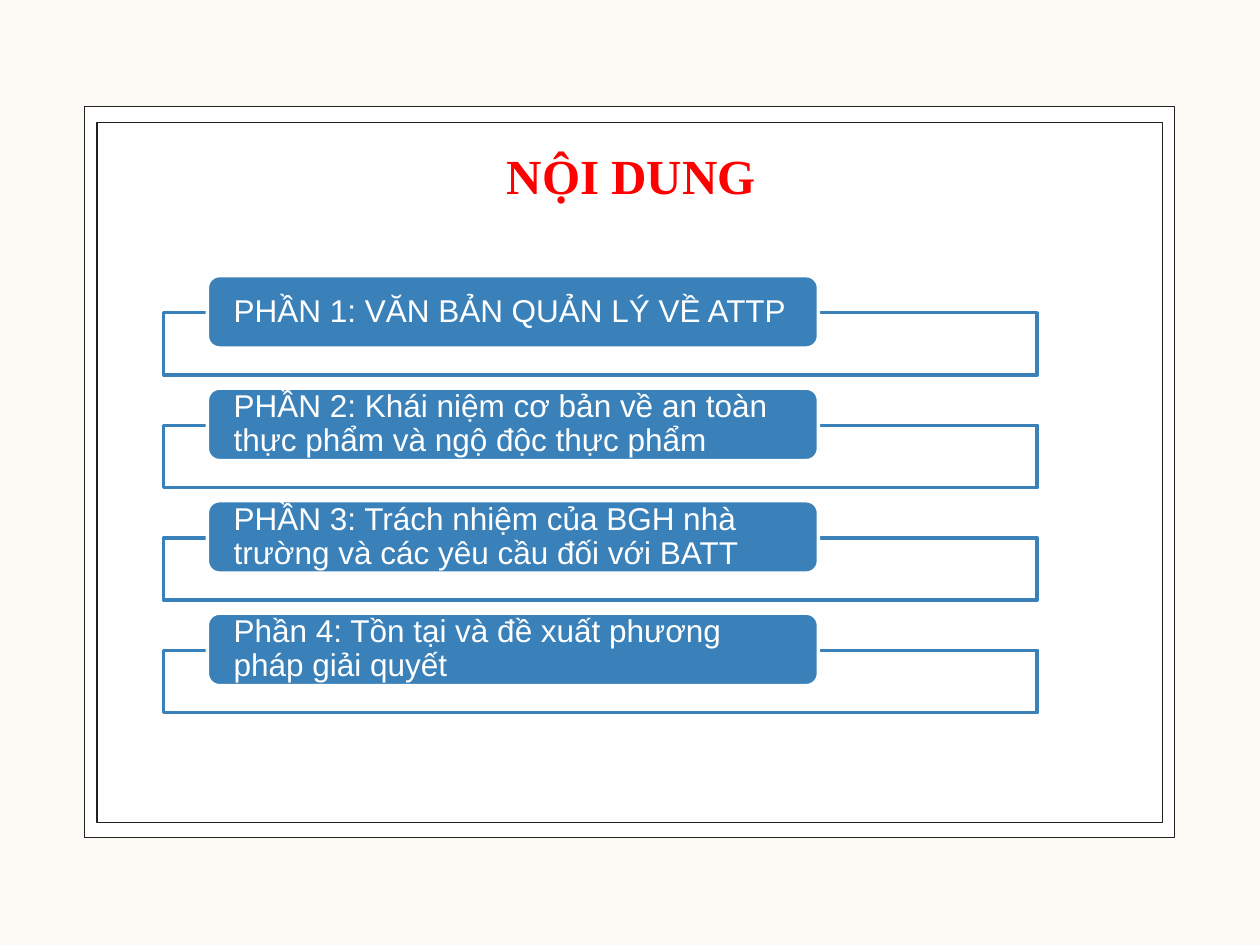
from lxml import etree
from pptx import Presentation
from pptx.dml.color import RGBColor
from pptx.enum.shapes import MSO_SHAPE
from pptx.enum.text import MSO_ANCHOR, MSO_AUTO_SIZE, PP_ALIGN
from pptx.oxml.ns import qn
from pptx.util import Pt

RECT, ROUND = MSO_SHAPE.RECTANGLE, MSO_SHAPE.ROUNDED_RECTANGLE
MIDDLE, BOTTOM = MSO_ANCHOR.MIDDLE, MSO_ANCHOR.BOTTOM
LEFT, CENTER = PP_ALIGN.LEFT, PP_ALIGN.CENTER
NO_FIT = MSO_AUTO_SIZE.NONE

# Content
TITLE = "NỘI DUNG"
PARTS = [
    "PHẦN 1: VĂN BẢN QUẢN LÝ VỀ ATTP",
    "PHẦN 2: Khái niệm cơ bản về an toàn thực phẩm và ngộ độc thực phẩm",
    "PHẦN 3: Trách nhiệm của BGH nhà trường và các yêu cầu đối với BATT",
    "Phần 4: Tồn tại và đề xuất phương pháp giải quyết",
]
CREAM, WHITE, INK, BLUE, RED = "FBFAF5", "FFFFFF", "231F1C", "3A81BA", "FF0000"

# Layout in points
FIRST_TOP, STEP = 157.5, 64.3
PILL_H, BOX_DROP, BOX_H = 41.4, 21.2, 35.7


def color(value):
    return RGBColor.from_string(value)


def add_box(kind, x, y, w, h, fill, line, width, opacity=100):
    sp = s.shapes.add_shape(kind, Pt(x), Pt(y), Pt(w), Pt(h))
    sp.shadow.inherit = False
    sp.line.color.rgb = color(line)
    sp.line.width = Pt(width)
    if fill is None:
        sp.fill.background()
        return sp
    sp.fill.solid()
    sp.fill.fore_color.rgb = color(fill)
    if opacity < 100:
        clr = sp.element.spPr.find(qn("a:solidFill"))[0]
        etree.SubElement(clr, qn("a:alpha"), val=str(opacity * 1000))
    return sp


def write(sp, text, font, size, fill, align, anchor, spacing, insets, bold=False):
    tf = sp.text_frame
    tf.word_wrap = True
    tf.auto_size = NO_FIT
    tf.vertical_anchor = anchor
    tf.margin_left = tf.margin_right = Pt(insets[0])
    tf.margin_top = tf.margin_bottom = Pt(insets[1])
    p = tf.paragraphs[0]
    p.alignment = align
    p.line_spacing = spacing
    r = p.add_run()
    r.text = text
    r.font.name, r.font.size, r.font.bold = font, Pt(size), bold
    r.font.color.rgb = color(fill)


prs = Presentation()
prs.slide_width, prs.slide_height = Pt(720), Pt(540)
s = prs.slides.add_slide(prs.slide_layouts[5])
s.background.fill.solid()
s.background.fill.fore_color.rgb = color(CREAM)

# Double frame
add_box(RECT, 48.4, 61, 622.8, 417.8, WHITE, INK, 0.75, opacity=93)
add_box(RECT, 55.4, 70, 609, 400, None, INK, 0.75)

# Title, brought in front of the frame
title = s.shapes.title
title.left, title.top, title.width, title.height = Pt(99.4), Pt(71.3), Pt(522.7), Pt(52.6)
write(title, TITLE, "Times New Roman", 28, RED, CENTER, BOTTOM, 1.5, (7.2, 7.2), bold=True)
s.shapes.element.append(title.element)

# Agenda: an outlined box with a label pill over its top edge
for i, text in enumerate(PARTS):
    top = FIRST_TOP + i * STEP
    add_box(RECT, 93.5, top + BOX_DROP, 499.2, BOX_H, WHITE, BLUE, 2, opacity=90)
    pill = add_box(ROUND, 118.5, top, 349.2, PILL_H, BLUE, WHITE, 2)
    write(pill, text, "Arial", 18, WHITE, LEFT, MIDDLE, 0.9, (13, 0))

prs.save("out.pptx")
